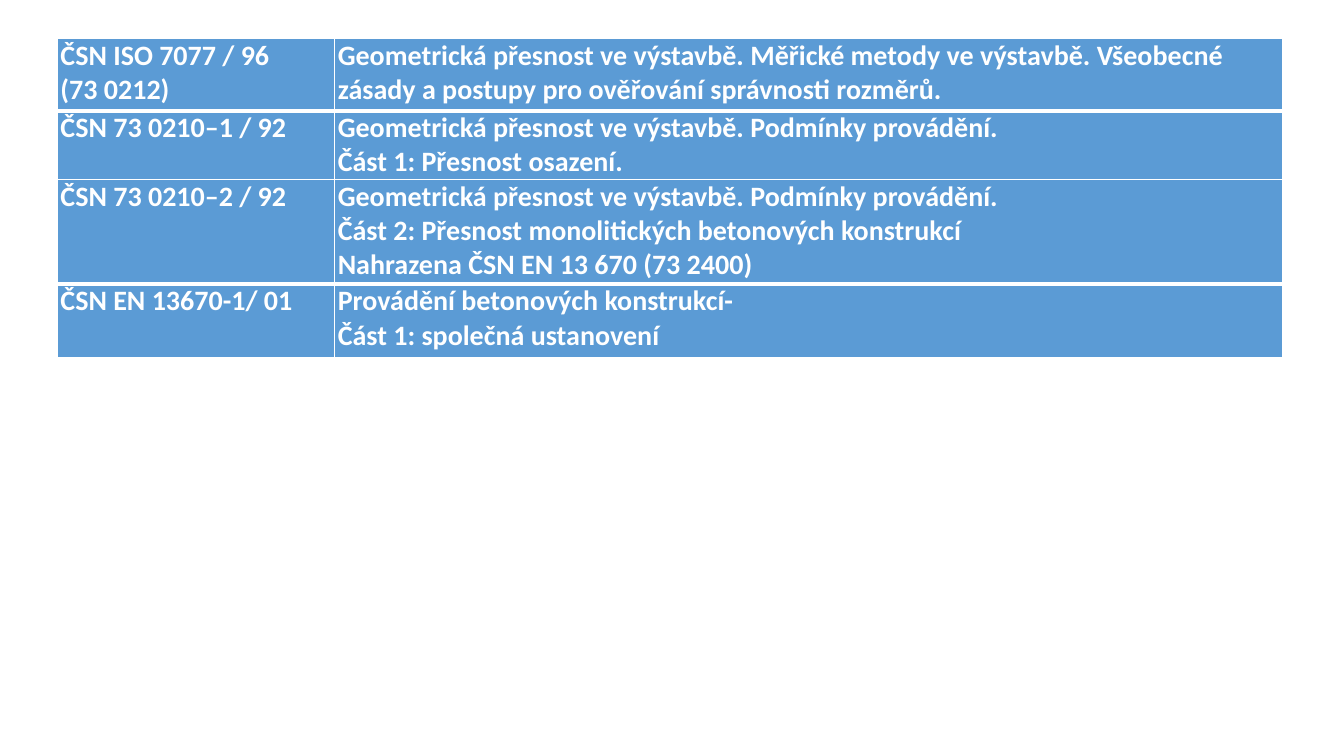
from dataclasses import dataclass

from lxml.etree import SubElement
from pptx import Presentation
from pptx.dml.color import RGBColor
from pptx.oxml.ns import qn
from pptx.table import Table, _Cell
from pptx.util import Emu, Pt

WHITE = RGBColor(0xFF, 0xFF, 0xFF)
BLUE = RGBColor(0x5B, 0x9B, 0xD5)
FONT = "Calibri"
THIN, THICK = 1, 3
COLS = (275, 940)


@dataclass(frozen=True)
class Norm:
    code: str
    title: str
    height: int
    top: int = THIN
    bottom: int = THIN


NORMS = (
    Norm("ČSN ISO 7077 / 96\n(73 0212)",
         "Geometrická přesnost ve výstavbě. Měřické metody ve výstavbě. "
         "Všeobecné zásady a postupy pro ověřování správnosti rozměrů.",
         72, bottom=THICK),
    Norm("ČSN 73 0210–1 / 92",
         "Geometrická přesnost ve výstavbě. Podmínky provádění.\n"
         "Část 1: Přesnost osazení.",
         64, top=THICK),
    Norm("ČSN 73 0210–2 / 92",
         "Geometrická přesnost ve výstavbě. Podmínky provádění.\n"
         "Část 2: Přesnost monolitických betonových konstrukcí\n"
         "Nahrazena ČSN EN 13 670 (73 2400)",
         104, bottom=THICK),
    Norm("ČSN EN 13670-1/ 01",
         "Provádění betonových konstrukcí-\nČást 1: společná ustanovení",
         73, top=THICK),
)


def px(count: int) -> Emu:
    """Convert px, 100 to the inch, into EMU."""
    return Emu(count * 9144)


def write(cell: _Cell, text: str, *, size: int = 20, bold: bool = True,
          color: RGBColor = WHITE, font: str = FONT) -> None:
    cell.text_frame.text = text
    for para in cell.text_frame.paragraphs:
        for run in para.runs:
            run.font.name = font
            run.font.size = Pt(size)
            run.font.bold = bold
            run.font.color.rgb = color


def edge(cell: _Cell, top: int, bottom: int) -> None:
    """Draw the four borders, with widths in points."""
    props = cell._tc.get_or_add_tcPr()
    for side, width in (("L", THIN), ("R", THIN), ("T", top), ("B", bottom)):
        line = SubElement(props, qn(f"a:ln{side}"), w=str(Pt(width)))
        fill = SubElement(line, qn("a:solidFill"))
        SubElement(fill, qn("a:srgbClr"), val=str(WHITE))


def fill_row(table: Table, index: int, norm: Norm) -> None:
    table.rows[index].height = px(norm.height)
    for col, text in enumerate((norm.code, norm.title)):
        cell = table.cell(index, col)
        cell.margin_left = cell.margin_right = px(3)
        cell.margin_top = cell.margin_bottom = 0
        edge(cell, norm.top, norm.bottom)
        cell.fill.solid()
        cell.fill.fore_color.rgb = BLUE
        write(cell, text)


def main() -> None:
    deck = Presentation()
    deck.slide_width, deck.slide_height = px(1333), px(750)
    slide = deck.slides.add_slide(deck.slide_layouts[6])
    height = sum(norm.height for norm in NORMS)
    table = slide.shapes.add_table(
        len(NORMS), len(COLS), px(57), px(38), px(sum(COLS)), px(height)).table
    table.first_row = table.horz_banding = False
    for col, width in zip(table.columns, COLS):
        col.width = px(width)
    for index, norm in enumerate(NORMS):
        fill_row(table, index, norm)
    deck.save("out.pptx")


if __name__ == "__main__":
    main()
